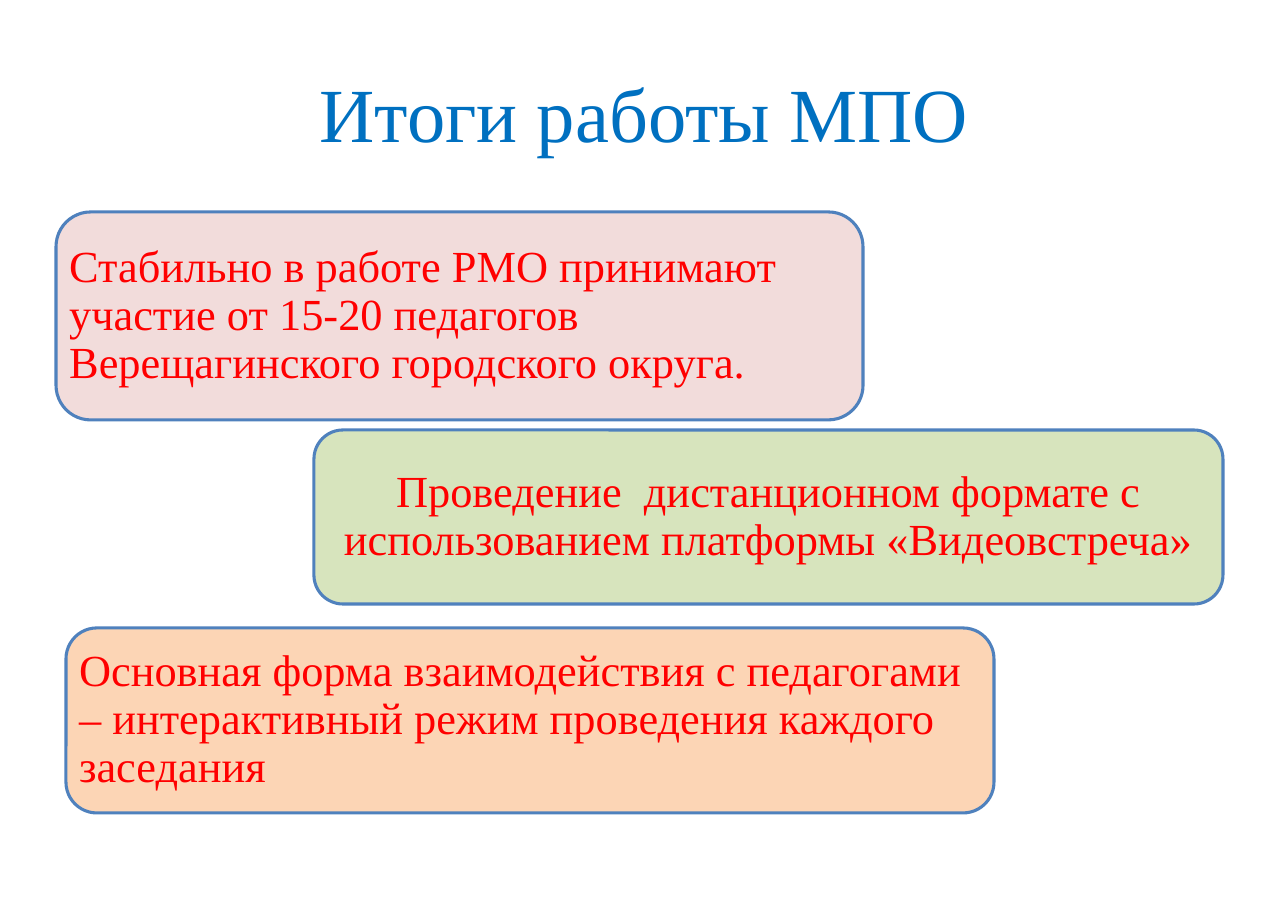
from pptx import Presentation
from pptx import util as u
from pptx.dml.color import RGBColor
from pptx.enum import shapes, text

PX = 914400 / 110.2
FONT = "Times New Roman"
COLORS = {
    "title": "0070C0",
    "body": "FF0000",
    "outline": "4F81BD",
    "pink": "F2DCDB",
    "green": "D7E4BD",
    "orange": "FCD5B5",
}
TEXT_INSET = 13
CORNER_INSET = 0.05


def px(length):
    return u.Emu(round(length * PX))


def add_text(paragraph, wording, size, color):
    run = paragraph.add_run()
    run.text = wording
    run.font.name = FONT
    run.font.size = u.Pt(size)
    run.font.color.rgb = RGBColor.from_string(COLORS[color])


presentation = Presentation()
presentation.slide_width = px(1288)
presentation.slide_height = px(910)
slide = presentation.slides.add_slide(presentation.slide_layouts[5])

title = slide.shapes.title
title.left, title.top, title.width, title.height = map(px, (64, 36, 1160, 152))
title.text_frame.vertical_anchor = text.MSO_ANCHOR.MIDDLE
title_paragraph = title.text_frame.paragraphs[0]
title_paragraph.alignment = text.PP_ALIGN.CENTER
add_text(title_paragraph, "Итоги работы МПО", 50, "title")

results = [
    ((56, 212, 807, 208), "pink", text.PP_ALIGN.LEFT,
     "Стабильно в работе РМО принимают участие от 15-20 педагогов "
     "Верещагинского городского округа."),
    ((314, 430, 909, 174), "green", text.PP_ALIGN.CENTER,
     "Проведение  дистанционном формате с использованием платформы "
     "«Видеовстреча»"),
    ((66, 628, 928, 185), "orange", text.PP_ALIGN.LEFT,
     "Основная форма взаимодействия с педагогами – интерактивный режим "
     "проведения каждого заседания"),
]

for box, fill, alignment, wording in results:
    shape = slide.shapes.add_shape(
        shapes.MSO_SHAPE.ROUNDED_RECTANGLE, *map(px, box))
    shape.shadow.inherit = False
    shape.fill.solid()
    shape.fill.fore_color.rgb = RGBColor.from_string(COLORS[fill])
    shape.line.color.rgb = RGBColor.from_string(COLORS["outline"])
    shape.line.width = u.Pt(2)

    frame = shape.text_frame
    frame.word_wrap = True
    frame.vertical_anchor = text.MSO_ANCHOR.MIDDLE
    inset = px(TEXT_INSET - round(box[3] * CORNER_INSET))
    frame.margin_left = frame.margin_right = inset
    frame.margin_top = frame.margin_bottom = inset

    paragraph = frame.paragraphs[0]
    paragraph.alignment = alignment
    paragraph.line_spacing = 0.9
    add_text(paragraph, wording, 29, "body")

presentation.save("out.pptx")
